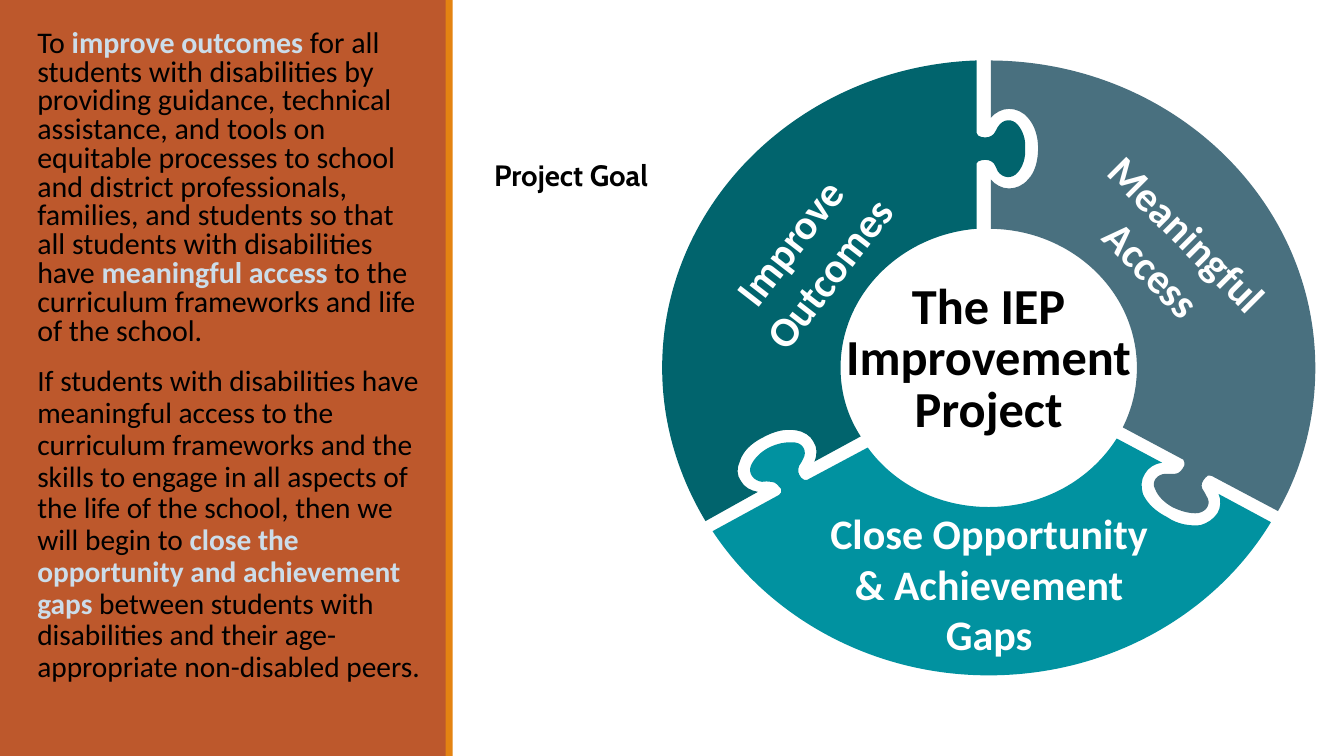
from dataclasses import dataclass

from lxml.etree import SubElement
from pptx import Presentation
from pptx.dml.color import RGBColor
from pptx.enum.shapes import MSO_SHAPE
from pptx.enum.text import MSO_ANCHOR, PP_ALIGN
from pptx.oxml.ns import qn
from pptx.util import Cm, Pt


@dataclass(frozen=True)
class Theme:
    body_font: str = "Calibri"
    label_font: str = "Cabin"
    panel: str = "BD582C"
    stripe: str = "E48312"
    ink: str = "000000"
    highlight: str = "CCDDEA"
    white: str = "FFFFFF"
    outcomes: str = "01646D"
    access: str = "49707F"
    gaps: str = "0192A0"
    title_size: float = 36
    piece_size: float = 30
    goal_size: float = 21.4
    body_size: float = 21


# Puzzle outlines in hundredths of an inch: a start point, then
# lines (x, y) and Bezier curves (x1, y1, x2, y2, x, y)
OUTCOMES_OUTLINE = [
    (735, 477), (731, 472, 731, 464, 734, 458), (737, 448, 745, 440, 757, 434),
    (768, 428, 779, 425, 790, 427), (797, 428, 804, 432, 807, 438),
    (811, 444, 811, 451, 808, 458), (854, 433), (841, 413, 834, 390, 834, 365),
    (834, 292, 894, 233, 969, 227), (969, 162), (970, 161, 971, 159, 974, 159),
    (979, 158, 983, 159, 986, 162), (988, 165, 989, 168, 990, 170),
    (995, 177, 1004, 178, 1010, 171), (1015, 165, 1018, 156, 1017, 147),
    (1018, 139, 1015, 130, 1010, 124), (1004, 117, 995, 118, 990, 126),
    (989, 128, 988, 130, 986, 133), (983, 136, 979, 137, 974, 136),
    (971, 136, 970, 134, 969, 132), (969, 60), (796, 66, 657, 200, 657, 365),
    (657, 420, 673, 472, 700, 517), (752, 488), (745, 487, 738, 483, 735, 477),
]
ACCESS_OUTLINE = [
    (1001, 108), (1008, 108, 1015, 111, 1020, 117), (1027, 125, 1030, 136, 1030, 147),
    (1030, 159, 1027, 171, 1020, 178), (1015, 184, 1008, 187, 1001, 187),
    (994, 187, 987, 183, 983, 178), (983, 227), (1063, 228, 1128, 289, 1128, 365),
    (1128, 386, 1123, 406, 1114, 424), (1174, 456), (1175, 458, 1176, 460, 1175, 462),
    (1173, 466, 1170, 470, 1166, 470), (1162, 470, 1160, 470, 1157, 470),
    (1148, 470, 1142, 478, 1146, 485), (1149, 493, 1156, 499, 1163, 503),
    (1171, 507, 1181, 510, 1189, 509), (1198, 507, 1202, 499, 1197, 492),
    (1196, 490, 1195, 488, 1193, 485), (1191, 481, 1193, 477, 1196, 474),
    (1197, 472, 1199, 471, 1202, 472), (1268, 507), (1292, 465, 1305, 416, 1305, 365),
    (1305, 197, 1161, 61, 983, 60), (983, 117), (987, 112, 994, 108, 1001, 108),
]
GAPS_OUTLINE = [
    (1208, 509), (1204, 515, 1198, 519, 1191, 521), (1180, 522, 1168, 520, 1158, 513),
    (1146, 507, 1138, 499, 1134, 490), (1132, 483, 1132, 476, 1136, 470),
    (1139, 464, 1146, 460, 1153, 459), (1108, 435), (1082, 476, 1035, 503, 981, 503),
    (931, 503, 887, 480, 861, 444), (801, 476), (799, 477, 797, 476, 795, 474),
    (792, 470, 791, 467, 793, 462), (794, 460, 796, 458, 797, 455),
    (801, 448, 797, 440, 789, 439), (780, 438, 771, 440, 763, 444),
    (755, 448, 748, 455, 745, 462), (742, 470, 748, 477, 756, 478),
    (759, 478, 762, 477, 765, 478), (770, 478, 772, 482, 775, 485),
    (776, 487, 775, 490, 773, 491), (707, 527), (764, 613, 866, 670, 981, 670),
    (1101, 670, 1206, 609, 1261, 518), (1209, 490), (1212, 496, 1211, 504, 1208, 509),
]
UNIT = Cm(0.0254)


class SlideBuilder:
    def __init__(self, slide, theme):
        self.slide, self.theme = slide, theme

    def set_font(self, font, size, color, bold=False, name=None):
        font.name, font.size, font.bold = name or self.theme.body_font, Pt(size), bold
        font.color.rgb = RGBColor.from_string(color)

    def paint(self, shape, color):
        shape.shadow.inherit = False
        shape.fill.solid()
        shape.fill.fore_color.rgb = RGBColor.from_string(color)
        shape.line.fill.background()

    def bar(self, left, width, color):
        shape = self.slide.shapes.add_shape(
            MSO_SHAPE.RECTANGLE, Cm(left), 0, Cm(width), Cm(19.05))
        self.paint(shape, color)

    def piece(self, ring, outline, color):
        corners = [(x * UNIT, y * UNIT) for *_, x, y in outline]
        builder = ring.shapes.build_freeform(*corners[0])
        builder.add_line_segments(corners[1:], close=True)
        shape = builder.convert_to_shape()
        self.paint(shape, color)
        # Bend the segments that have control points
        left, top = (min(axis) for axis in zip(*corners))
        lines = list(shape._element.iter(qn("a:lnTo")))
        for line, segment in zip(lines, outline[1:]):
            if len(segment) == 2:
                continue
            curve = line.makeelement(qn("a:cubicBezTo"))
            for x, y in zip(segment[::2], segment[1::2]):
                SubElement(curve, qn("a:pt"), x=str(x * UNIT - left), y=str(y * UNIT - top))
            line.getparent().replace(line, curve)

    def title(self, text, left, top, width, height):
        title = self.slide.shapes.title
        title.left, title.top, title.width, title.height = map(Cm, (left, top, width, height))
        frame = title.text_frame
        frame.text, frame.word_wrap, frame.vertical_anchor = text, True, MSO_ANCHOR.TOP
        paragraph = frame.paragraphs[0]
        paragraph.alignment, paragraph.line_spacing = PP_ALIGN.CENTER, 0.85
        self.set_font(paragraph.font, self.theme.title_size, self.theme.ink, True)

    def text_box(self, left, top, width, height):
        box = self.slide.shapes.add_textbox(*map(Cm, (left, top, width, height)))
        box.text_frame.word_wrap = True
        return box

    def label(self, text, left, top, width, height, size, color, rotation=0, font=None):
        box = self.text_box(left, top, width, height)
        box.rotation = rotation
        frame = box.text_frame
        frame.margin_top = frame.margin_bottom = Cm(0.25)
        frame.text = text
        paragraph = frame.paragraphs[0]
        paragraph.alignment = PP_ALIGN.CENTER
        self.set_font(paragraph.font, size, color, True, font)

    def statements(self, statements, left, top, width, height):
        """Paragraphs whose every second run is highlighted."""
        frame = self.text_box(left, top, width, height).text_frame
        frame.margin_left = Cm(0.51)
        for index, (size, spacing, before, parts) in enumerate(statements):
            paragraph = frame.add_paragraph() if index else frame.paragraphs[0]
            paragraph.line_spacing, paragraph.space_before = spacing, Pt(before)
            for position, part in enumerate(parts):
                run = paragraph.add_run()
                run.text = part
                strong = position % 2 == 1
                color = self.theme.highlight if strong else self.theme.ink
                self.set_font(run.font, size, color, strong)


def main():
    theme = Theme()
    deck = Presentation()
    deck.slide_width, deck.slide_height = Cm(33.87), Cm(19.05)
    slide = deck.slides.add_slide(deck.slide_layouts[5])
    builder = SlideBuilder(slide, theme)

    # Side panel with the goal statements
    builder.bar(0, 11.25, theme.panel)
    builder.bar(11.23, 0.18, theme.stripe)
    builder.title("The IEP Improvement Project", 20.32, 7.01, 9.19, 5.69)
    builder.statements([
        (theme.goal_size, 0.8, 0, [
            "To ", "improve outcomes ",
            "for all students with disabilities by providing guidance, technical "
            "assistance, and tools on equitable processes to school and district "
            "professionals, families, and students so that all students with "
            "disabilities have ",
            "meaningful access ", "to the curriculum frameworks and life of the school."]),
        (theme.body_size, 0.9, 14, [
            "If students with disabilities have meaningful access to the curriculum "
            "frameworks and the skills to engage in all aspects of the life of the "
            "school, then we will begin to ",
            "close the opportunity and achievement gaps ",
            "between students with disabilities and their age-appropriate "
            "non-disabled peers."]),
    ], 0.43, 0.64, 10.59, 17.68)

    # Puzzle ring
    ring = slide.shapes.add_group_shape()
    builder.piece(ring, OUTCOMES_OUTLINE, theme.outcomes)
    builder.piece(ring, ACCESS_OUTLINE, theme.access)
    builder.piece(ring, GAPS_OUTLINE, theme.gaps)

    # Labels
    for text, *place, rotation in [
        ("Improve Outcomes", 16.76, 4.95, 7.26, 3.07, 307.8),
        ("Meaningful Access", 25.86, 4.8, 7.26, 3.07, 45),
        ("Close Opportunity & Achievement Gaps", 20.47, 12.55, 8.92, 4.37, 0),
    ]:
        builder.label(text, *place, theme.piece_size, theme.white, rotation)
    builder.label("Project Goal", 11.84, 3.71, 5.11, 1.42,
                  theme.body_size, theme.ink, font=theme.label_font)

    deck.save("out.pptx")


if __name__ == "__main__":
    main()
